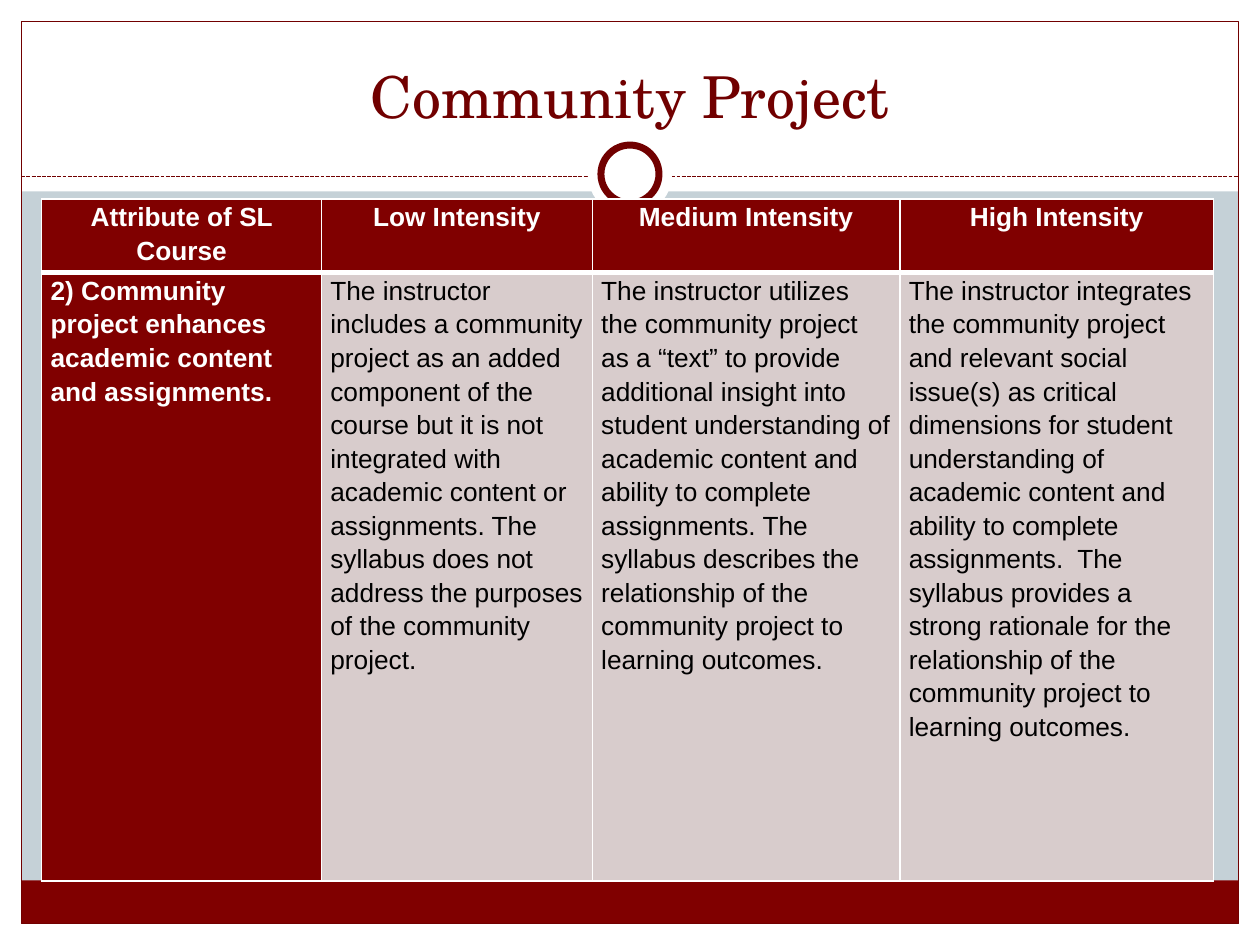
from lxml import etree
from pptx import Presentation
from pptx.dml.color import RGBColor
from pptx.enum.dml import MSO_LINE
from pptx.enum.shapes import MSO_CONNECTOR, MSO_SHAPE
from pptx.enum.text import MSO_ANCHOR, PP_ALIGN
from pptx.oxml.ns import qn
from pptx.util import Cm, Pt

RECT, OVAL = MSO_SHAPE.RECTANGLE, MSO_SHAPE.OVAL
LEFT, CENTER = PP_ALIGN.LEFT, PP_ALIGN.CENTER
HUES = {"back": "C5D1D7", "white": "FFFFFF", "black": "000000",
        "red": "800000", "dark": "710000", "pale": "D8CCCC"}
WIDE, HIGH, EDGE = 25.4, 19.05, 0.43


def hue(name):
    return RGBColor.from_string(HUES[name])


def add_form(kind, box, fill=None, line=None, width=0.75):
    form = slide.shapes.add_shape(kind, *map(Cm, box))
    form.shadow.inherit = False
    if fill:
        form.fill.solid()
        form.fill.fore_color.rgb = hue(fill)
    else:
        form.fill.background()
    if line:
        form.line.color.rgb = hue(line)
        form.line.width = Pt(width)
    else:
        form.line.fill.background()


prs = Presentation()
prs.slide_width, prs.slide_height = Cm(WIDE), Cm(HIGH)
slide = prs.slides.add_slide(prs.slide_layouts[6])
slide.background.fill.solid()
slide.background.fill.fore_color.rgb = hue("back")

# White margins, foot band and frame
for box in [(0, HIGH - EDGE, WIDE, EDGE), (0, 0, WIDE, 3.86),
            (0, 0, EDGE, HIGH), (WIDE - EDGE, 0, EDGE, HIGH)]:
    add_form(RECT, box, "white")
inner = WIDE - 2 * EDGE
add_form(RECT, (EDGE, 17.75, inner, 0.87), "red")
add_form(RECT, (EDGE, EDGE, inner, HIGH - 2 * EDGE), line="dark")

# Dashed rule
rule = slide.shapes.add_connector(
    MSO_CONNECTOR.STRAIGHT, Cm(EDGE), Cm(3.56), Cm(WIDE - EDGE), Cm(3.56))
rule.line.color.rgb = hue("dark")
rule.line.width = Pt(0.75)
rule.line.dash_style = MSO_LINE.SQUARE_DOT
etree.SubElement(rule._element.spPr, qn("a:effectLst"))

# Ring on the rule
for size, line in [(1.7, None), (1.17, "dark")]:
    box = (WIDE / 2 - size / 2, 3.51 - size / 2, size, size)
    add_form(OVAL, box, "white", line, 4)

# Title
title = slide.shapes.add_textbox(Cm(0.85), Cm(0.64), Cm(23.7), Cm(2.11))
frame = title.text_frame
frame.word_wrap = True
frame.vertical_anchor = MSO_ANCHOR.BOTTOM
para = frame.paragraphs[0]
para.alignment = CENTER
run = para.add_run()
run.text = "Community Project"
run.font.name = "TeX Gyre Schola"
run.font.size = Pt(33)
run.font.color.rgb = hue("dark")

# Table
ROWS = [
    ["Attribute of SL Course", "Low Intensity", "Medium Intensity",
     "High Intensity"],
    ["2) Community project enhances academic content and assignments.",
     "The instructor includes a community project as an added component of "
     "the course but it is not integrated with academic content or "
     "assignments. The syllabus does not address the purposes of the "
     "community project.",
     "The instructor utilizes the community project as a “text” to provide "
     "additional insight into student understanding of academic content and "
     "ability to complete assignments. The syllabus describes the "
     "relationship of the community project to learning outcomes.",
     "The instructor integrates the community project and relevant social "
     "issue(s) as critical dimensions for student understanding of academic "
     "content and ability to complete assignments.  The syllabus provides a "
     "strong rationale for the relationship of the community project to "
     "learning outcomes."],
]
COLS, TALL = [5.64, 5.46, 6.2, 6.32], [1.48, 12.27]
grid = slide.shapes.add_table(2, 4, Cm(0.84), Cm(4.01),
                              Cm(sum(COLS)), Cm(sum(TALL))).table
for col, width in zip(grid.columns, COLS):
    col.width = Cm(width)
for row, height in zip(grid.rows, TALL):
    row.height = Cm(height)

for r, texts in enumerate(ROWS):
    for c, text in enumerate(texts):
        cell = grid.cell(r, c)
        head = r == 0 or c == 0
        cell.margin_left = cell.margin_right = Cm(0.18)
        cell.margin_top = cell.margin_bottom = 0
        para = cell.text_frame.paragraphs[0]
        para.alignment = CENTER if r == 0 else LEFT
        para.line_spacing = 1.15
        run = para.add_run()
        run.text = text
        run.font.name = "Arial"
        run.font.size = Pt(15)
        run.font.bold = head
        run.font.color.rgb = hue("white" if head else "black")

        # Borders go before the fill; the line under the header is thick
        props = cell._tc.get_or_add_tcPr()
        thick = "lnB" if r == 0 else "lnT"
        for side in ("lnL", "lnR", "lnT", "lnB"):
            width = Pt(3 if side == thick else 1)
            edge = etree.SubElement(props, qn("a:" + side), w=str(width))
            paint = etree.SubElement(edge, qn("a:solidFill"))
            etree.SubElement(paint, qn("a:srgbClr"), val=HUES["white"])
        cell.fill.solid()
        cell.fill.fore_color.rgb = hue("red" if head else "pale")

prs.save("out.pptx")
